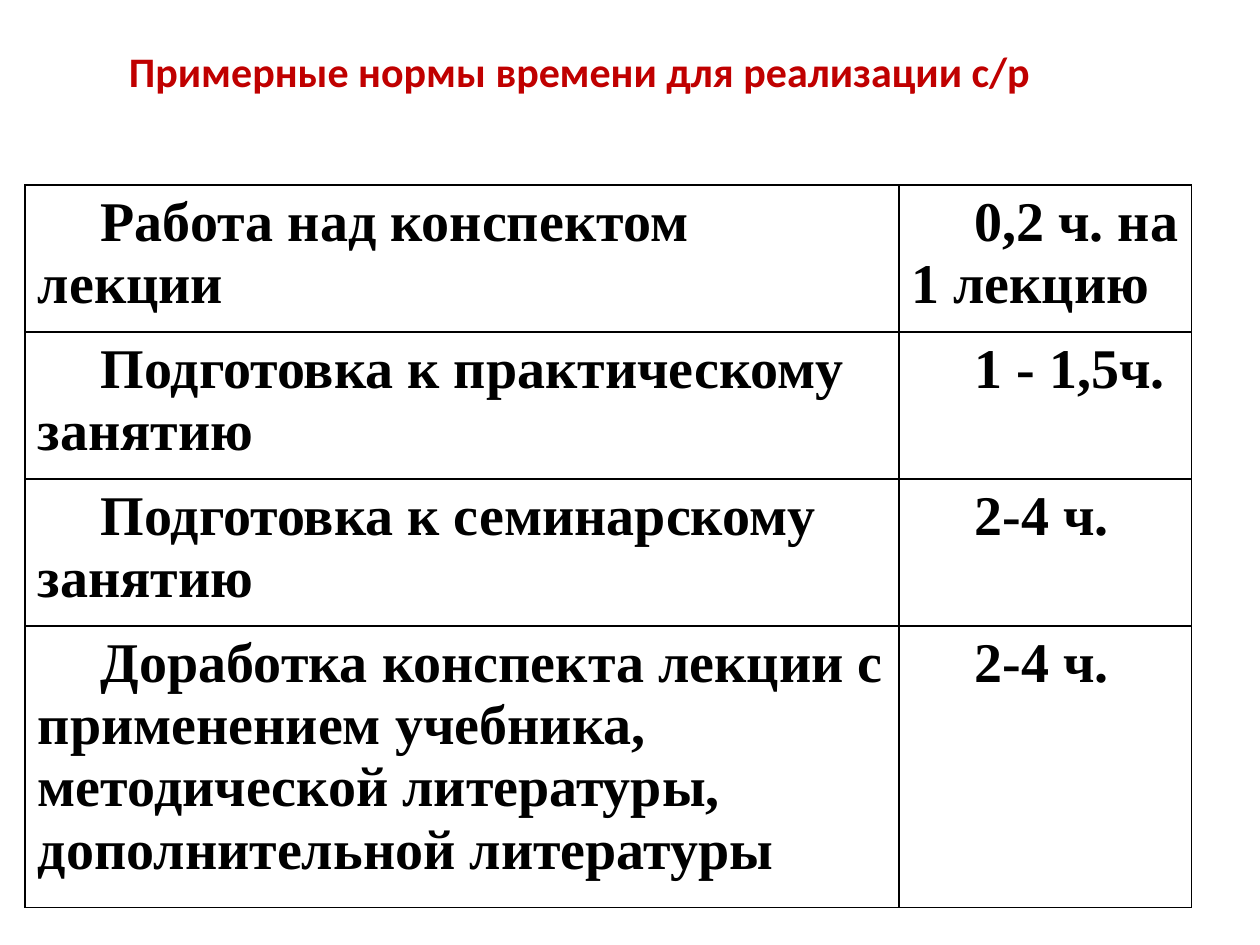
from typing import Any, NamedTuple

from lxml.etree import SubElement
from pptx import Presentation
from pptx.dml.color import RGBColor
from pptx.enum.text import MSO_ANCHOR, PP_ALIGN
from pptx.oxml.ns import qn
from pptx.util import Pt

RED = RGBColor(0xC0, 0x00, 0x00)
BLACK = RGBColor(0x00, 0x00, 0x00)

HEAD = {"name": "Calibri", "size": Pt(24), "bold": True}
BODY = {"name": "Times New Roman", "size": Pt(32), "bold": True}
PADS = {"margin_left": Pt(7.2), "margin_right": Pt(7.2),
        "margin_top": Pt(3.6), "margin_bottom": Pt(3.6)}
TITLE_BOX = {"left": Pt(36), "top": Pt(18), "width": Pt(590.4), "height": Pt(44.64)}
SIDES = ("a:lnL", "a:lnR", "a:lnT", "a:lnB")


class Norm(NamedTuple):
    task: str
    time: str
    height: float


NORMS = [
    Norm("Работа над конспектом лекции", "0,2 ч. на 1 лекцию", 84),
    Norm("Подготовка к практическому занятию", "1 - 1,5ч.", 84),
    Norm("Подготовка к семинарскому занятию", "2-4 ч.", 84),
    Norm("Доработка конспекта лекции с применением учебника, "
         "методической литературы, дополнительной литературы", "2-4 ч.", 160.8),
]
WIDTHS = (499.2, 167.3)


def apply(item: Any, values: dict) -> None:
    for key, value in values.items():
        setattr(item, key, value)


def write(par: Any, text: str, style: dict, color: RGBColor) -> None:
    run = par.add_run()
    run.text = text
    apply(run.font, style)
    run.font.color.rgb = color


def frame(cell: Any) -> None:
    """Draw a thin line on all four sides of a cell."""
    props = cell._tc.get_or_add_tcPr()
    for spot, side in enumerate(SIDES):
        line = SubElement(props, qn(side), w=str(Pt(1)))
        fill = SubElement(line, qn("a:solidFill"))
        SubElement(fill, qn("a:srgbClr"), val=str(BLACK))
        props.insert(spot, line)  # lines come before the fill


def fill_cell(cell: Any, text: str) -> None:
    apply(cell, PADS)
    cell.fill.background()
    frame(cell)
    par = cell.text_frame.paragraphs[0]
    props = par._p.get_or_add_pPr()
    props.set("marL", "0")
    props.set("indent", str(Pt(36)))
    write(par, text, BODY, BLACK)


def main() -> None:
    deck = Presentation()
    apply(deck, {"slide_width": Pt(720), "slide_height": Pt(540)})
    slide = deck.slides.add_slide(deck.slide_layouts[5])

    # Title
    title = slide.shapes.title
    apply(title, TITLE_BOX)
    title.text_frame.vertical_anchor = MSO_ANCHOR.MIDDLE
    par = title.text_frame.paragraphs[0]
    par.alignment = PP_ALIGN.CENTER
    write(par, "Примерные нормы времени для реализации с/р", HEAD, RED)

    # Table of time norms
    total = sum(norm.height for norm in NORMS)
    table = slide.shapes.add_table(len(NORMS), len(WIDTHS), Pt(14.4), Pt(105.84),
                                   Pt(sum(WIDTHS)), Pt(total)).table
    apply(table, {"first_row": False, "horz_banding": False})
    for col, width in zip(table.columns, WIDTHS):
        col.width = Pt(width)
    for row, norm in zip(table.rows, NORMS):
        row.height = Pt(norm.height)
        for cell, text in zip(row.cells, (norm.task, norm.time)):
            fill_cell(cell, text)

    deck.save("out.pptx")


if __name__ == "__main__":
    main()
